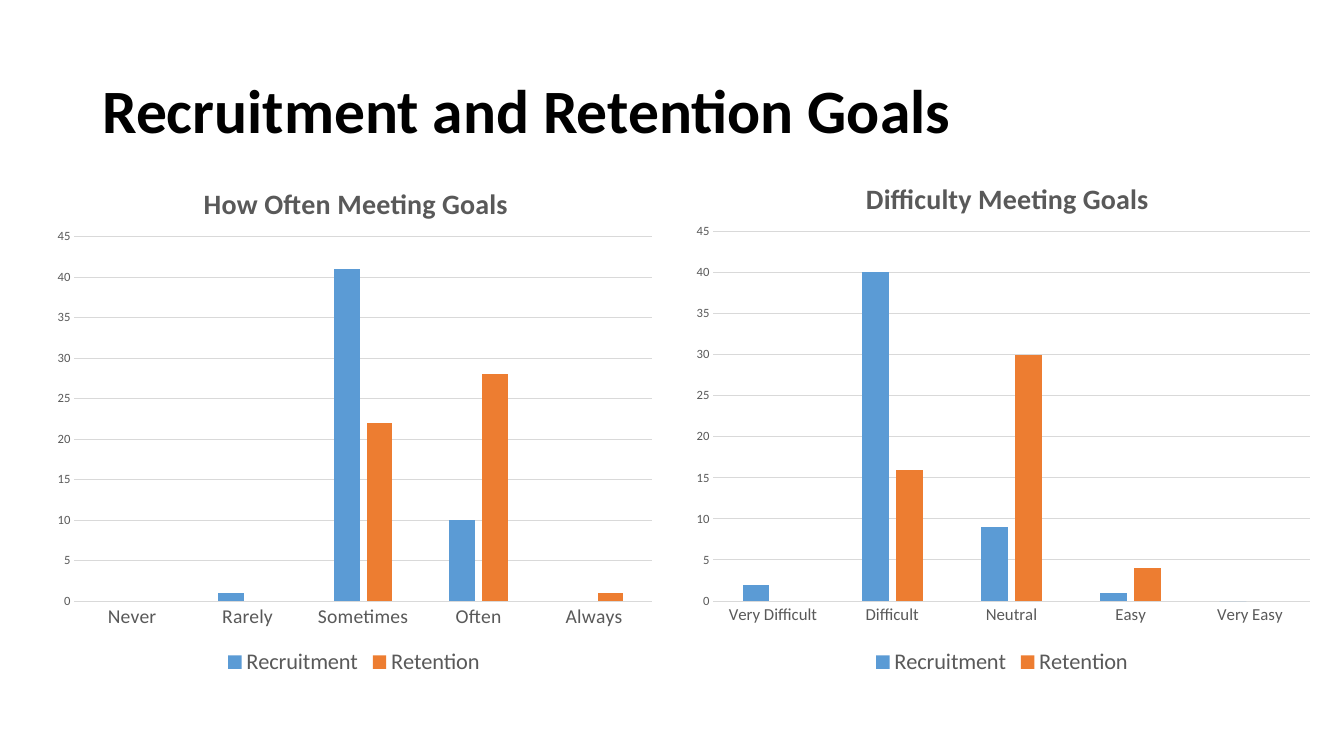
from lxml import etree
from pptx import Presentation
from pptx import util as u
from pptx.chart import data as chart_data
from pptx.dml import color
from pptx.enum import chart as chart_enum
from pptx.enum import text
from pptx.oxml import ns

FONT = "Calibri"
GRAY = "595959"
RULE = "D9D9D9"
SERIES_COLORS = {"Recruitment": "5B9BD5", "Retention": "ED7D31"}


def rgb(value):
    """Turn a hex string into a colour."""
    return color.RGBColor.from_string(value)


def format_font(font, size, fill=GRAY, bold=False):
    """Set the face, size, colour and weight of a font."""
    font.name, font.size, font.bold = FONT, u.Pt(size), bold
    font.color.rgb = rgb(fill)


def write_text(frame, words, line_spacing=None, **font_format):
    """Write one formatted paragraph into a text frame."""
    paragraph = frame.paragraphs[0]
    paragraph.line_spacing = line_spacing
    run = paragraph.add_run()
    run.text = words
    format_font(run.font, **font_format)


def set_layout(parent, index, **fractions):
    """Place a chart part by fractions of the chart area."""
    for old in parent.findall(ns.qn("c:layout")):
        parent.remove(old)
    layout = etree.Element(ns.qn("c:layout"))
    manual = etree.SubElement(layout, ns.qn("c:manualLayout"))
    settings = {"xMode": "edge", "yMode": "edge", **fractions}
    if "w" in fractions:
        settings = {"layoutTarget": "inner", **settings}
    for name, value in settings.items():
        etree.SubElement(manual, ns.qn(f"c:{name}")).set("val", str(value))
    parent.insert(index, layout)


def add_heading(slide, box, words):
    """Add the slide heading in the given box."""
    shape = slide.shapes.add_textbox(*map(u.Pt, box))
    frame = shape.text_frame
    frame.word_wrap = True
    frame.vertical_anchor = text.MSO_ANCHOR.MIDDLE
    write_text(frame, words, line_spacing=0.9, size=44, fill="000000", bold=True)


def style_axes(chart, category_size):
    """Format both axes and the gridlines."""
    for axis, size in ((chart.category_axis, category_size), (chart.value_axis, 9)):
        axis.major_tick_mark = chart_enum.XL_TICK_MARK.NONE
        axis.minor_tick_mark = chart_enum.XL_TICK_MARK.NONE
        format_font(axis.tick_labels.font, size)
    chart.value_axis.format.line.fill.background()
    chart.value_axis.minimum_scale, chart.value_axis.maximum_scale = 0, 45
    chart.value_axis.major_unit = 5
    for line in (chart.category_axis.format.line,
                 chart.value_axis.major_gridlines.format.line):
        line.color.rgb, line.width = rgb(RULE), u.Pt(0.75)


def add_goal_chart(slide, box, title, categories, values, category_size,
                   title_place, plot_place):
    """Add a titled clustered column chart in the given box."""
    data = chart_data.CategoryChartData()
    data.categories = categories
    for name, numbers in zip(SERIES_COLORS, values):
        data.add_series(name, numbers)
    chart = slide.shapes.add_chart(
        chart_enum.XL_CHART_TYPE.COLUMN_CLUSTERED, *map(u.Pt, box), data).chart
    format_font(chart.font, 10, "000000")
    chart.has_title = True
    write_text(chart.chart_title.text_frame, title, size=20, fill=GRAY, bold=True)
    style_axes(chart, category_size)

    plot = chart.plots[0]
    plot.gap_width, plot.overlap, plot.vary_by_categories = 219, -27, False
    for series in plot.series:
        series.format.fill.solid()
        series.format.fill.fore_color.rgb = rgb(SERIES_COLORS[series.name])

    chart.has_legend = True
    chart.legend.position = chart_enum.XL_LEGEND_POSITION.BOTTOM
    chart.legend.include_in_layout = False
    format_font(chart.legend.font, 16)

    chart_xml = chart.element.find(ns.qn("c:chart")) if hasattr(chart, "element") \
        else chart._chartSpace.find(ns.qn("c:chart"))
    set_layout(chart_xml.find(ns.qn("c:title")), 1, **title_place)
    set_layout(chart_xml.find(ns.qn("c:plotArea")), 0, **plot_place)


def main():
    """Build and save the slide."""
    presentation = Presentation()
    presentation.slide_width, presentation.slide_height = u.Pt(960), u.Pt(540)
    slide = presentation.slides.add_slide(presentation.slide_layouts[6])
    add_heading(slide, (66, 28.8, 828, 104.4), "Recruitment and Retention Goals")
    top, height = 108.7, 377.3
    add_goal_chart(
        slide, (31, top, 443.5, height), "How Often Meeting Goals",
        ("Never", "Rarely", "Sometimes", "Often", "Always"),
        ((None, 1, 41, 10, None), (None, None, 22, 28, 1)), 14,
        {"x": 0.25, "y": 0.05}, {"x": 0.05, "y": 0.16, "w": 0.93, "h": 0.69})
    add_goal_chart(
        slide, (486.7, top, 457.9, height), "Difficulty Meeting Goals",
        ("Very Difficult", "Difficult", "Neutral", "Easy", "Very Easy"),
        ((2, 40, 9, 1, 0), (None, 16, 30, 4, None)), 12,
        {"x": 0.28, "y": 0.04}, {"x": 0.05, "y": 0.15, "w": 0.93, "h": 0.7})
    presentation.save("out.pptx")


if __name__ == "__main__":
    main()
